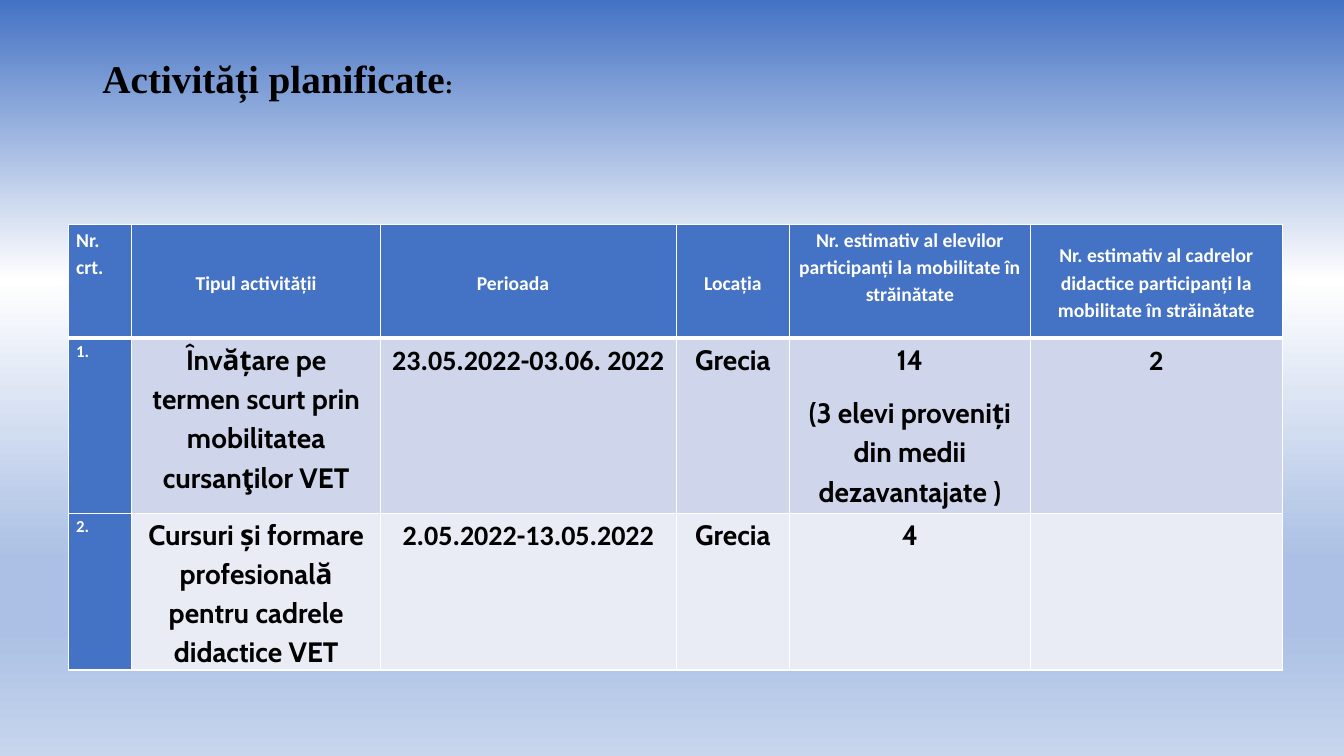
from lxml import etree
from pptx import Presentation
from pptx.dml.color import RGBColor
from pptx.enum.text import MSO_ANCHOR as Anchor, PP_ALIGN as Align
from pptx.oxml import parse_xml
from pptx.oxml.ns import nsdecls, qn
from pptx.util import Pt

BLUE, WHITE, BLACK = "4472C4", "FFFFFF", "000000"
BODY_FILLS = ["CFD5EA", "E9EBF5"]
BACKDROP = [(0, BLUE), (37, WHITE), (74, "ABC0E4"), (83, "ABC0E4"), (100, "C7D5ED")]

COLUMN_WIDTHS = [45, 178, 211, 81, 172, 180]
ROW_HEIGHTS = [81, 125, 93]
HEADINGS = [
    "Nr. crt.", "Tipul activității", "Perioada", "Locația",
    "Nr. estimativ al elevilor participanți la mobilitate în străinătate",
    "Nr. estimativ al cadrelor didactice participanți la mobilitate în străinătate",
]
ACTIVITIES = [
    ["1.", "Învățare pe termen scurt prin mobilitatea cursanţilor VET",
     "23.05.2022-03.06. 2022", "Grecia",
     "14\n(3 elevi proveniți din medii dezavantajate )", "2"],
    ["2.", "Cursuri și formare profesională pentru cadrele didactice VET",
     "2.05.2022-13.05.2022", "Grecia", "4", ""],
]
NUMBER, PERIOD, PUPILS, TEACHERS = 0, 2, 4, 5


def rgb(value):
    return RGBColor.from_string(value)


def add_run(paragraph, text, font, size, color):
    run = paragraph.add_run()
    run.text = text
    run.font.name, run.font.size, run.font.bold = font, Pt(size), True
    run.font.color.rgb = rgb(color)


def paint_background(slide):
    fill = slide.background.fill
    fill.gradient()
    fill.gradient_angle = 270
    stops = fill.gradient_stops
    stop_list = slide.element.find(".//" + qn("a:gsLst"))
    for stop in list(stop_list):
        stop_list.remove(stop)
    for position, color in BACKDROP:
        stop_list.append(parse_xml(
            f'<a:gs {nsdecls("a")} pos="{position * 1000}">'
            f'<a:srgbClr val="{color}"/></a:gs>'))


def add_title(slide, left, top, width, height):
    title = slide.shapes.title
    title.left, title.top, title.width, title.height = map(Pt, (left, top, width, height))
    frame = title.text_frame
    frame.word_wrap = True
    frame.vertical_anchor = Anchor.TOP
    frame.margin_top = Pt(13.6)
    heading = frame.paragraphs[0]
    heading.alignment, heading.line_spacing = Align.LEFT, 0.9
    add_run(heading, "Activități planificate", "Times New Roman", 28, BLACK)
    add_run(heading, ":", "Times New Roman", 18, BLACK)


def set_borders(cell, widths):
    properties = cell._tc.get_or_add_tcPr()
    for index, (side, width) in enumerate(widths.items()):
        line = etree.Element(qn(f"a:ln{side}"), w=str(Pt(width)))
        solid = etree.SubElement(line, qn("a:solidFill"))
        etree.SubElement(solid, qn("a:srgbClr"), val=WHITE)
        properties.insert(index, line)


def fill_cell(cell, text, fill, align, font, size, color):
    cell.fill.solid()
    cell.fill.fore_color.rgb = rgb(fill)
    cell.margin_left = cell.margin_right = Pt(5.4)
    cell.margin_top = cell.margin_bottom = 0
    frame = cell.text_frame
    for index, line in enumerate(text.split("\n") if text else []):
        paragraph = frame.add_paragraph() if index else frame.paragraphs[0]
        paragraph.alignment = align
        paragraph.line_spacing, paragraph.space_after = 1.15, Pt(10)
        add_run(paragraph, line, font, size, color)


def add_activities(slide, left, top):
    rows = [HEADINGS] + ACTIVITIES
    table = slide.shapes.add_table(
        len(rows), len(HEADINGS), Pt(left), Pt(top),
        Pt(sum(COLUMN_WIDTHS)), Pt(sum(ROW_HEIGHTS))).table
    for column, width in zip(table.columns, COLUMN_WIDTHS):
        column.width = Pt(width)
    for row, height in zip(table.rows, ROW_HEIGHTS):
        row.height = Pt(height)

    for r, texts in enumerate(rows):
        for c, text in enumerate(texts):
            cell = table.cell(r, c)
            align = Align.JUSTIFY if c == NUMBER else Align.CENTER
            if r == 0:
                fill_cell(cell, text, BLUE, align, "Calibri", 14, WHITE)
                if c not in (NUMBER, PUPILS):
                    cell.vertical_anchor = Anchor.MIDDLE
            elif c == NUMBER:
                fill_cell(cell, text, BLUE, align, "Calibri", 12, WHITE)
            else:
                font = "Calibri" if c in (PERIOD, TEACHERS) else "Cabin"
                fill_cell(cell, text, BODY_FILLS[r - 1], align, font, 20, BLACK)
            set_borders(cell, {"L": 1, "R": 1, "T": 3 if r == 1 else 1,
                               "B": 3 if r == 0 else 1})

    # The period heading stands left of its column's middle
    period = table.cell(0, PERIOD)
    period.margin_left = Pt(68.6)
    period.text_frame.paragraphs[0].alignment = Align.LEFT


def main():
    deck = Presentation()
    deck.slide_width, deck.slide_height = Pt(960), Pt(540)
    slide = deck.slides.add_slide(deck.slide_layouts[5])
    paint_background(slide)
    add_title(slide, 66, 28.8, 828, 104.4)
    add_activities(slide, 49, 160.6)
    deck.save("out.pptx")


if __name__ == "__main__":
    main()
